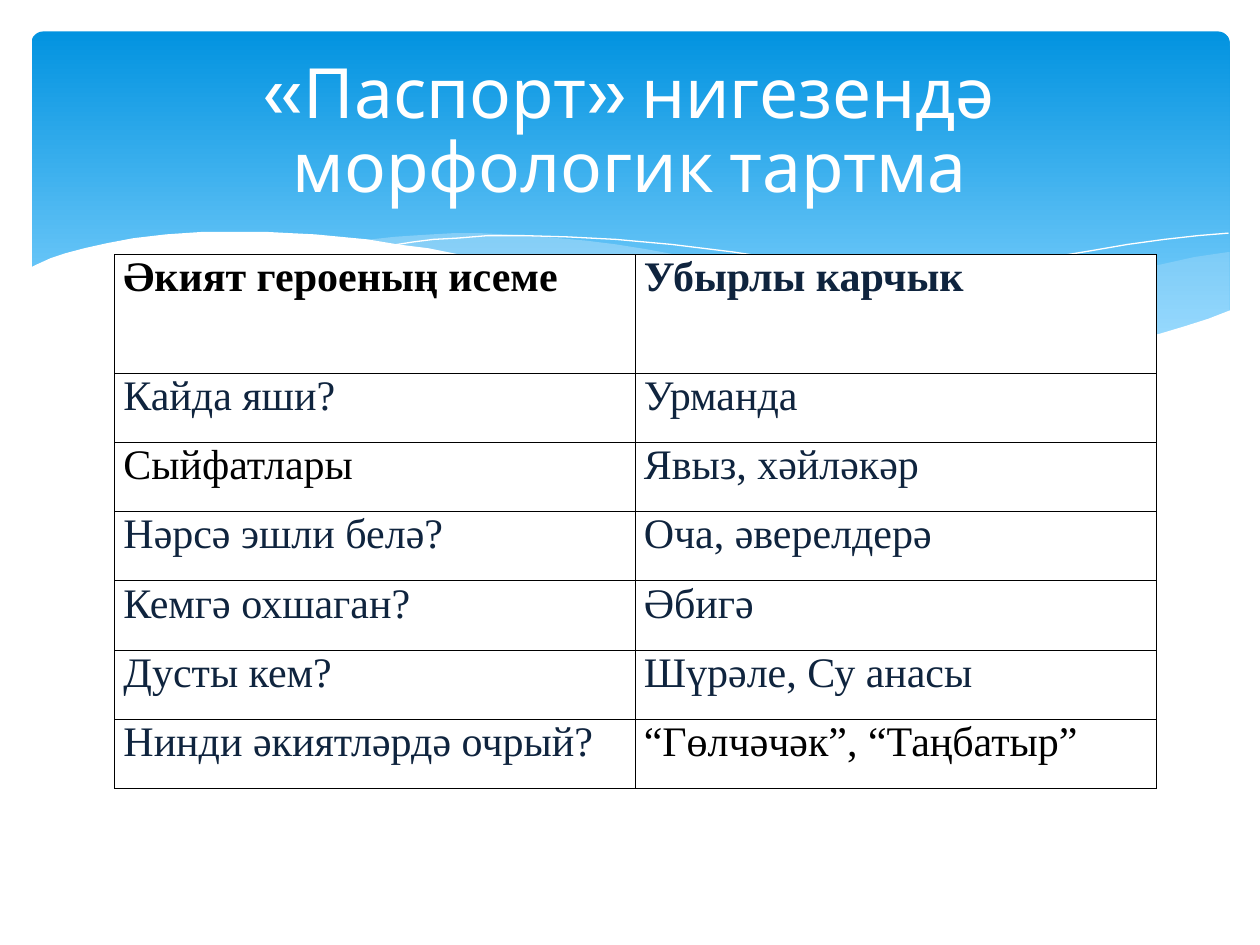
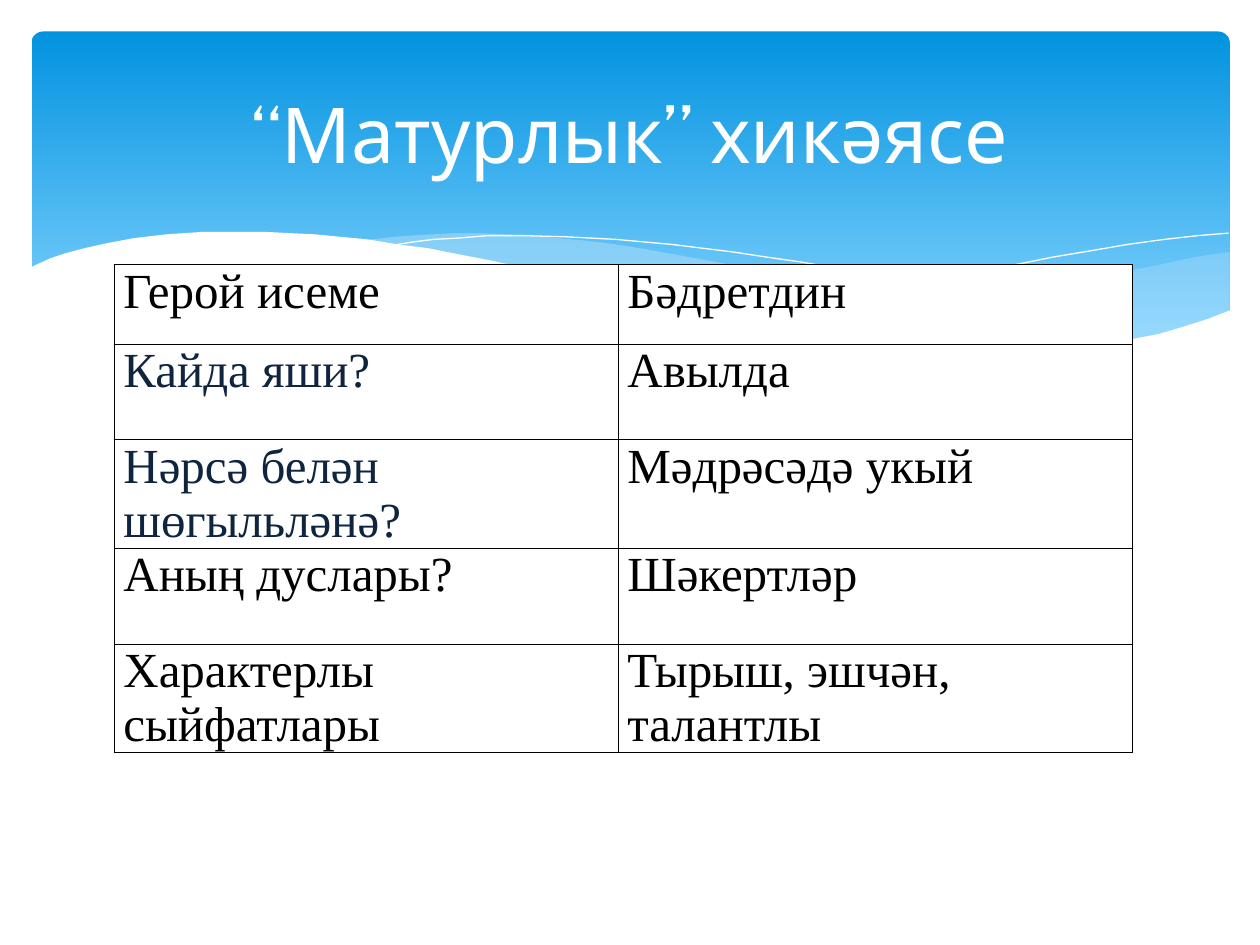
import pptx
import pptx.dml.color
import pptx.enum.shapes
import pptx.enum.text
import pptx.oxml
import pptx.oxml.ns
import pptx.util
from lxml import etree

Inches = pptx.util.Inches
Pt = pptx.util.Pt
RGBColor = pptx.dml.color.RGBColor

WHITE = RGBColor(0xFF, 0xFF, 0xFF)
BLACK = RGBColor(0, 0, 0)
NAVY = RGBColor(0x0F, 0x24, 0x3E)
BAND_TOP = RGBColor(0x02, 0x93, 0xE0)
BAND_BOTTOM = RGBColor(0x83, 0xD3, 0xFE)
PALE_BLUE = RGBColor(0xC6, 0xE7, 0xFC)

TITLE_FONT = "Cabin"
TABLE_FONT = "Times New Roman"

# Wave outlines in hundredths of an inch
RIGHT_WAVE = [
    (975, 200), (948, 204), (921, 210), (891, 216), (861, 223), (832, 230),
    (805, 237), (779, 242), (753, 248), (729, 253), (706, 257), (683, 262),
    (661, 265), (691, 269), (719, 272), (745, 275), (769, 277), (803, 278),
    (824, 277), (844, 277), (863, 275), (881, 273), (897, 270), (913, 267),
    (928, 263), (942, 259), (963, 252), (976, 247), (976, 200)]
LONG_WAVE = [
    (893, 273), (866, 269), (837, 265), (807, 260), (775, 254), (741, 247),
    (706, 240), (668, 231), (629, 222), (598, 214), (569, 208), (541, 203),
    (514, 198), (489, 194), (465, 191), (442, 189), (420, 187), (399, 186),
    (380, 185), (361, 185), (344, 186), (328, 187), (313, 188), (286, 191),
    (323, 196), (362, 203), (404, 211), (449, 222), (491, 232), (530, 240),
    (566, 248), (601, 255), (634, 261), (665, 266), (695, 270), (722, 274),
    (748, 276), (773, 277), (796, 278), (838, 278), (857, 277), (876, 275)]
LONG_LINE = [
    (309, 195), (328, 192), (344, 190), (363, 189), (387, 187), (416, 187),
    (450, 188), (489, 190), (533, 194), (582, 200), (608, 204), (636, 208),
    (665, 213), (695, 219), (727, 226), (760, 233), (795, 241), (831, 251),
    (869, 261), (907, 272)]
RIGHT_LINE = [
    (613, 257), (653, 246), (695, 235), (748, 223), (776, 216), (806, 210),
    (836, 204), (866, 199), (895, 194), (924, 190), (951, 187), (975, 185)]
WHITE_WAVE = [
    (977, 246), (959, 253), (940, 259), (920, 265), (899, 269), (875, 273),
    (850, 275), (823, 277), (809, 277), (778, 276), (744, 274), (708, 270),
    (668, 265), (626, 258), (579, 250), (529, 239), (475, 227), (447, 220),
    (418, 213), (391, 207), (365, 202), (340, 197), (316, 194), (292, 190),
    (271, 188), (250, 186), (230, 185), (211, 184), (161, 184), (132, 186),
    (106, 189), (85, 193), (67, 197), (52, 201), (40, 205), (29, 210),
    (23, 213), (23, 329), (977, 329)]


def add_wave(slide, left, top, points, close):
    outline = slide.shapes.build_freeform(*points[0], scale=Inches(0.01))
    outline.add_line_segments(points[1:], close=close)
    wave = outline.convert_to_shape(left, top)
    wave.shadow.inherit = False
    return wave


def add_filled_wave(slide, left, top, points, color, opacity=100):
    wave = add_wave(slide, left, top, points, True)
    wave.fill.solid()
    wave.fill.fore_color.rgb = color
    wave.line.fill.background()
    if opacity < 100:
        rgb = wave.element.spPr.find(".//" + pptx.oxml.ns.qn("a:srgbClr"))
        etree.SubElement(rgb, pptx.oxml.ns.qn("a:alpha"), val=str(opacity * 1000))


def add_wave_line(slide, left, top, points):
    line = add_wave(slide, left, top, points, False)
    line.fill.background()
    line.line.color.rgb = WHITE
    line.line.width = Pt(0)


def add_header(slide, left, top):
    """Gradient band with waves, placed from the page's top left corner."""
    band = slide.shapes.add_shape(
        pptx.enum.shapes.MSO_SHAPE.ROUNDED_RECTANGLE,
        left + Inches(0.25), top + Inches(0.25), Inches(9.51), Inches(2.7))
    band.adjustments[0] = 0.034
    band.shadow.inherit = False
    band.line.fill.background()
    band.fill.gradient()
    band.fill.gradient_angle = 270
    stops = zip(band.fill.gradient_stops, (0, 0.9), (BAND_TOP, BAND_BOTTOM))
    for stop, position, color in stops:
        stop.position = position
        stop.color.rgb = color

    add_filled_wave(slide, left, top, RIGHT_WAVE, PALE_BLUE, 29)
    add_filled_wave(slide, left, top, LONG_WAVE, PALE_BLUE, 40)
    add_wave_line(slide, left, top, LONG_LINE)
    add_wave_line(slide, left, top, RIGHT_LINE)
    add_filled_wave(slide, left, top, WHITE_WAVE, WHITE)


def set_title(slide, text, size, line_spacing):
    title = slide.shapes.title
    title.left, title.top = Inches(0.5), Inches(0.37)
    title.width, title.height = Inches(9), Inches(1.37)
    title.text_frame.text = text
    title.text_frame.word_wrap = True
    title.text_frame.vertical_anchor = pptx.enum.text.MSO_ANCHOR.MIDDLE
    paragraph = title.text_frame.paragraphs[0]
    paragraph.alignment = pptx.enum.text.PP_ALIGN.CENTER
    paragraph.line_spacing = line_spacing
    paragraph.font.name = TITLE_FONT
    paragraph.font.size = Pt(size)
    paragraph.font.color.rgb = WHITE
    # Bring the title in front of the band
    title.element.getparent().append(title.element)


def set_borders(cell):
    properties = cell._tc.get_or_add_tcPr()
    for index, side in enumerate(("lnL", "lnR", "lnT", "lnB")):
        properties.insert(index, pptx.oxml.parse_xml(
            f'<a:{side} {pptx.oxml.ns.nsdecls("a")} w="{Pt(0.5)}"><a:solidFill>'
            f'<a:srgbClr val="{BLACK}"/></a:solidFill></a:{side}>'))


def fill_cell(cell, text, color, size, bold):
    cell.text = text
    cell.margin_left = cell.margin_right = Inches(0.07)
    cell.margin_top = cell.margin_bottom = 0
    cell.fill.solid()
    cell.fill.fore_color.rgb = WHITE
    set_borders(cell)
    font = cell.text_frame.paragraphs[0].font
    font.name = TABLE_FONT
    font.size = Pt(size)
    font.bold = bold
    font.color.rgb = color


def add_passport_table(slide, left, top, columns, heights, rows, size, bold_header):
    """Question and answer table; each row is two (text, colour) pairs."""
    table = slide.shapes.add_table(
        len(rows), len(columns), left, top,
        Inches(sum(columns)), Inches(sum(heights))).table
    table.first_row = table.horz_banding = False
    for column, width in zip(table.columns, columns):
        column.width = Inches(width)
    for number, (row, height, content) in enumerate(zip(table.rows, heights, rows)):
        row.height = Inches(height)
        for cell, (text, color) in zip(row.cells, content):
            fill_cell(cell, text, color, size, bold_header and number == 0)


def add_passport_slide(deck, title, title_size, line_spacing, **table):
    slide = deck.slides.add_slide(deck.slide_layouts[5])
    add_header(slide, 0, 0)
    add_passport_table(slide, Inches(0.91), **table)
    set_title(slide, title, title_size, line_spacing)


def main():
    deck = pptx.Presentation()
    deck.slide_width, deck.slide_height = Inches(10), Inches(7.5)

    add_passport_slide(
        deck, "«Паспорт» нигезендә морфологик тартма", 39.6, 0.9,
        top=Inches(2.02), columns=(4.13, 4.14), heights=[0.94] + [0.55] * 6,
        size=24, bold_header=True,
        rows=[
            (("Әкият героеның исеме", BLACK), ("Убырлы карчык", NAVY)),
            (("Кайда яши?", NAVY), ("Урманда", NAVY)),
            (("Сыйфатлары", BLACK), ("Явыз, хәйләкәр", NAVY)),
            (("Нәрсә эшли белә?", NAVY), ("Оча, әверелдерә", NAVY)),
            (("Кемгә охшаган?", NAVY), ("Әбигә", NAVY)),
            (("Дусты кем?", NAVY), ("Шүрәле, Су анасы", NAVY)),
            (("Нинди әкиятләрдә очрый?", NAVY), ("“Гөлчәчәк”, “Таңбатыр”", BLACK)),
        ])

    add_passport_slide(
        deck, "“Матурлык” хикәясе", 44, 1.0,
        top=Inches(2.1), columns=(4, 4.08), heights=[0.63] + [0.76] * 4,
        size=28, bold_header=False,
        rows=[
            (("Герой исеме", BLACK), ("Бәдретдин", BLACK)),
            (("Кайда яши?", NAVY), ("Авылда", BLACK)),
            (("Нәрсә белән шөгыльләнә?", NAVY), ("Мәдрәсәдә укый", BLACK)),
            (("Аның дуслары?", BLACK), ("Шәкертләр", BLACK)),
            (("Характерлы сыйфатлары", BLACK), ("Тырыш, эшчән, талантлы", BLACK)),
        ])

    deck.save("out.pptx")


if __name__ == "__main__":
    main()
